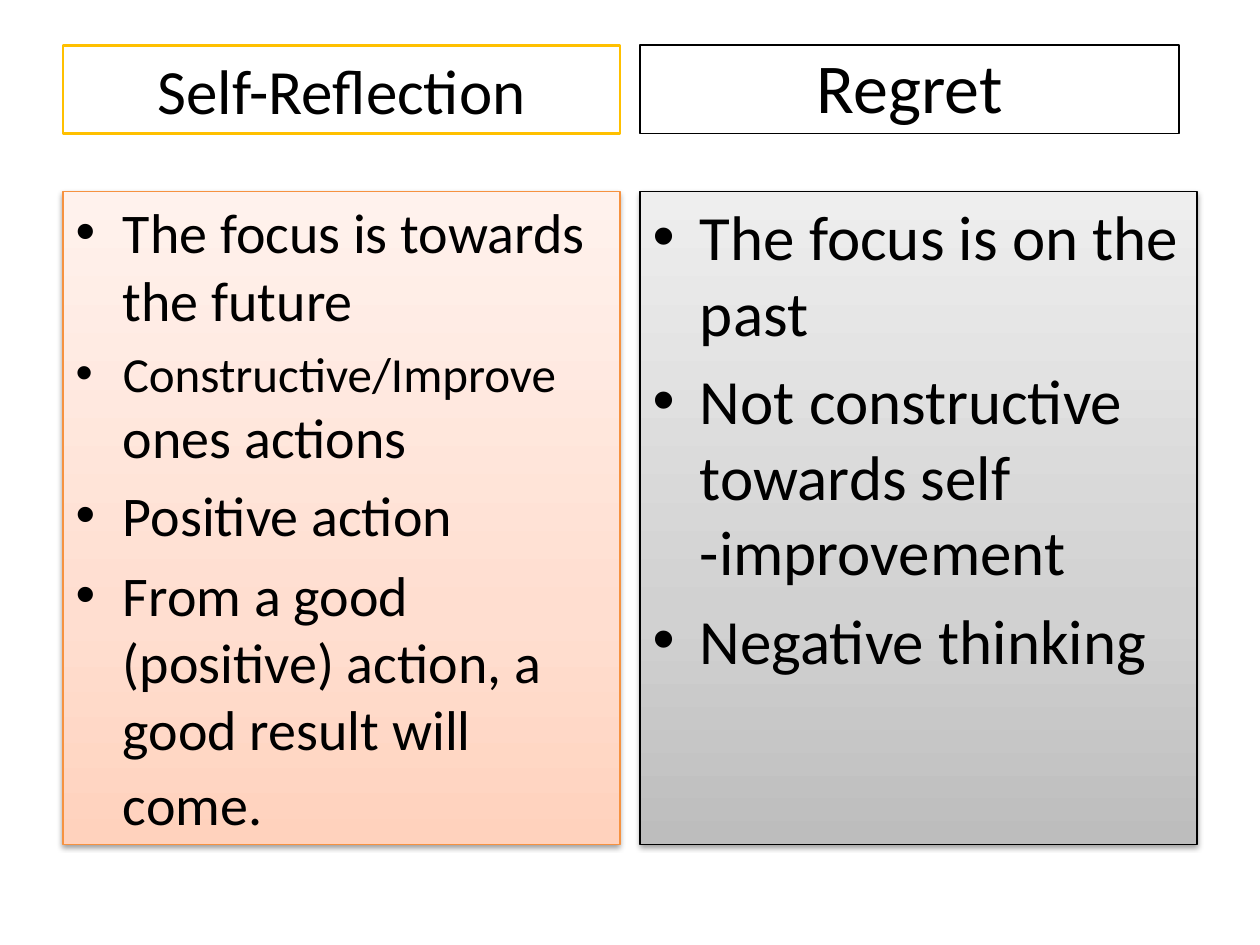
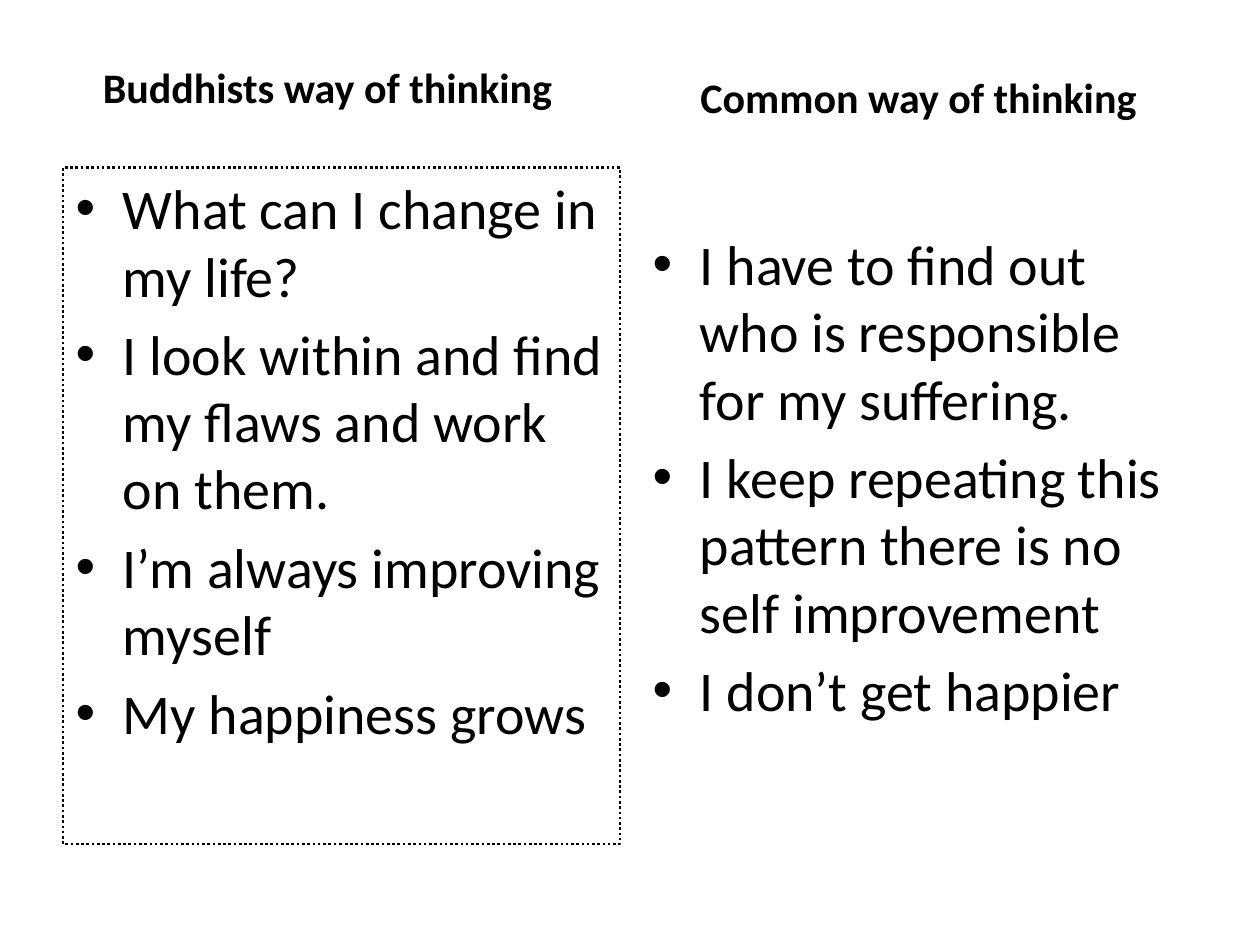
"""Build two comparison slides about self-reflection and ways of thinking."""
from copy import deepcopy

from lxml import etree
from pptx import Presentation
from pptx.dml.color import RGBColor
from pptx.enum import dml, text
from pptx.oxml.ns import qn
from pptx.util import Inches, Pt

BLACK = RGBColor(0x00, 0x00, 0x00)
WHITE = RGBColor(0xFF, 0xFF, 0xFF)
GOLD = RGBColor(0xFF, 0xC0, 0x00)
ORANGE = RGBColor(0xF6, 0x92, 0x40)
PEACH_STOPS = (RGBColor(0xFF, 0xD2, 0xBD), RGBColor(0xFF, 0xDE, 0xD0), RGBColor(0xFF, 0xF2, 0xED))
GREY_STOPS = (RGBColor(0xBD, 0xBD, 0xBD), RGBColor(0xD1, 0xD1, 0xD1), RGBColor(0xEE, 0xEE, 0xEE))
STOP_POSITIONS = (0, 0.35, 1)

FONT = "Calibri"
COMPARISON_LAYOUT = 4
LEFT, RIGHT = 0.5, 5.08
COLUMN_WIDTH, HEADING_HEIGHT, BOTTOM = 4.42, 0.7, 6.7


def place(shape, left, top, width, height):
    """Put a shape at a position given in inches."""
    shape.left, shape.top = Inches(left), Inches(top)
    shape.width, shape.height = Inches(width), Inches(height)


def write(paragraph, parts, bold=False):
    """Fill a paragraph with (wording, size) runs."""
    for wording, size in parts:
        run = paragraph.add_run()
        run.text = wording
        run.font.name, run.font.size, run.font.bold = FONT, Pt(size), bold
        run.font.color.rgb = BLACK


def outline(shape, color, width, dash=None):
    """Draw the border of a shape."""
    shape.line.color.rgb = color
    shape.line.width = Pt(width)
    if dash:
        shape.line.dash_style = dash


def shade(shape, colors):
    """Fill a shape with a gradient that rises from the bottom, and add a soft shadow."""
    shape.fill.gradient()
    shape.fill.gradient_angle = 90
    stop_list = shape.element.spPr.find(".//" + qn("a:gsLst"))
    stop_list.append(deepcopy(stop_list[0]))
    for stop, color, position in zip(shape.fill.gradient_stops, colors, STOP_POSITIONS):
        stop.color.rgb, stop.position = color, position
    effects = etree.SubElement(shape.element.spPr, qn("a:effectLst"))
    shadow = etree.SubElement(effects, qn("a:outerShdw"), blurRad=str(Pt(3.1)),
                              dist=str(Pt(1.6)), dir="5400000", rotWithShape="0")
    shadow_color = etree.SubElement(shadow, qn("a:srgbClr"), val=str(BLACK))
    etree.SubElement(shadow_color, qn("a:alpha"), val="38000")


def add_heading(shape, box, wording, size, bold=False, anchor=text.MSO_ANCHOR.BOTTOM):
    """Format a column heading inside the given box."""
    place(shape, *box)
    frame = shape.text_frame
    frame.auto_size, frame.vertical_anchor = text.MSO_AUTO_SIZE.NONE, anchor
    frame.paragraphs[0].alignment = text.PP_ALIGN.CENTER
    write(frame.paragraphs[0], [(wording, size)], bold)


def add_points(shape, box, points, size, anchor=text.MSO_ANCHOR.TOP):
    """Write bullet points, each a string or a list of runs, inside the given box."""
    place(shape, *box)
    frame = shape.text_frame
    frame.auto_size, frame.vertical_anchor = text.MSO_AUTO_SIZE.NONE, anchor
    for index, point in enumerate(points):
        paragraph = frame.add_paragraph() if index else frame.paragraphs[0]
        write(paragraph, [(point, size)] if isinstance(point, str) else point)


def add_comparison(presentation):
    """Add a comparison slide without a title and return its four placeholders."""
    slide = presentation.slides.add_slide(presentation.slide_layouts[COMPARISON_LAYOUT])
    title = slide.shapes.title.element
    title.getparent().remove(title)
    return list(slide.placeholders)


def build_reflection_slide(presentation):
    """Compare self-reflection with regret."""
    heading_top, top = 0.36, 1.52
    reflection, reflection_points, regret, regret_points = add_comparison(presentation)

    add_heading(reflection, (LEFT, heading_top, COLUMN_WIDTH, HEADING_HEIGHT),
                "Self-Reflection", 36)
    outline(reflection, GOLD, 1.5)
    add_points(reflection_points, (LEFT, top, COLUMN_WIDTH, BOTTOM - top), [
        "The focus is towards the future",
        [("Constructive/Improve ", 28), ("ones actions", 32)],
        "Positive action",
        [("From a good (positive) action, a good result will come.", 32), ("\t", 36)],
    ], 32)
    outline(reflection_points, ORANGE, 0.75)
    shade(reflection_points, PEACH_STOPS)

    add_heading(regret, (RIGHT, heading_top, 4.28, HEADING_HEIGHT), "Regret", 40)
    outline(regret, BLACK, 1)
    add_points(regret_points, (RIGHT, top, COLUMN_WIDTH, BOTTOM - top), [
        "The focus is on the past",
        "Not constructive towards self -improvement",
        "Negative thinking",
    ], 36)
    outline(regret_points, BLACK, 0.75)
    shade(regret_points, GREY_STOPS)


def build_thinking_slide(presentation):
    """Compare the Buddhist way of thinking with the common one."""
    top = 1.33
    buddhist, buddhist_points, common, common_points = add_comparison(presentation)

    add_heading(buddhist, (0.39, 0.44, COLUMN_WIDTH, HEADING_HEIGHT),
                "Buddhists way of thinking", 24, True, text.MSO_ANCHOR.TOP)
    add_points(buddhist_points, (LEFT, top, COLUMN_WIDTH, BOTTOM - top), [
        "What can I change in my life?",
        "I look within and find my flaws and work on them.",
        "I’m always improving myself",
        "My happiness grows",
    ], 32)
    outline(buddhist_points, BLACK, 1.5, dml.MSO_LINE.ROUND_DOT)

    add_heading(common, (RIGHT, 0.32, COLUMN_WIDTH, HEADING_HEIGHT),
                "Common way of thinking", 24, True)
    add_points(common_points, (RIGHT, top, COLUMN_WIDTH, BOTTOM - top), [
        "I have to find out who is responsible for my suffering.",
        "I keep repeating this pattern there is no self improvement",
        "I don’t get happier",
    ], 32, text.MSO_ANCHOR.MIDDLE)
    common_points.text_frame.margin_bottom = Inches(0.52)
    common_points.fill.solid()
    common_points.fill.fore_color.rgb = WHITE
    outline(common_points, WHITE, 2)


def main():
    """Build and save the presentation."""
    presentation = Presentation()
    presentation.slide_width, presentation.slide_height = Inches(10), Inches(7.5)
    build_reflection_slide(presentation)
    build_thinking_slide(presentation)
    presentation.save("out.pptx")


if __name__ == "__main__":
    main()
